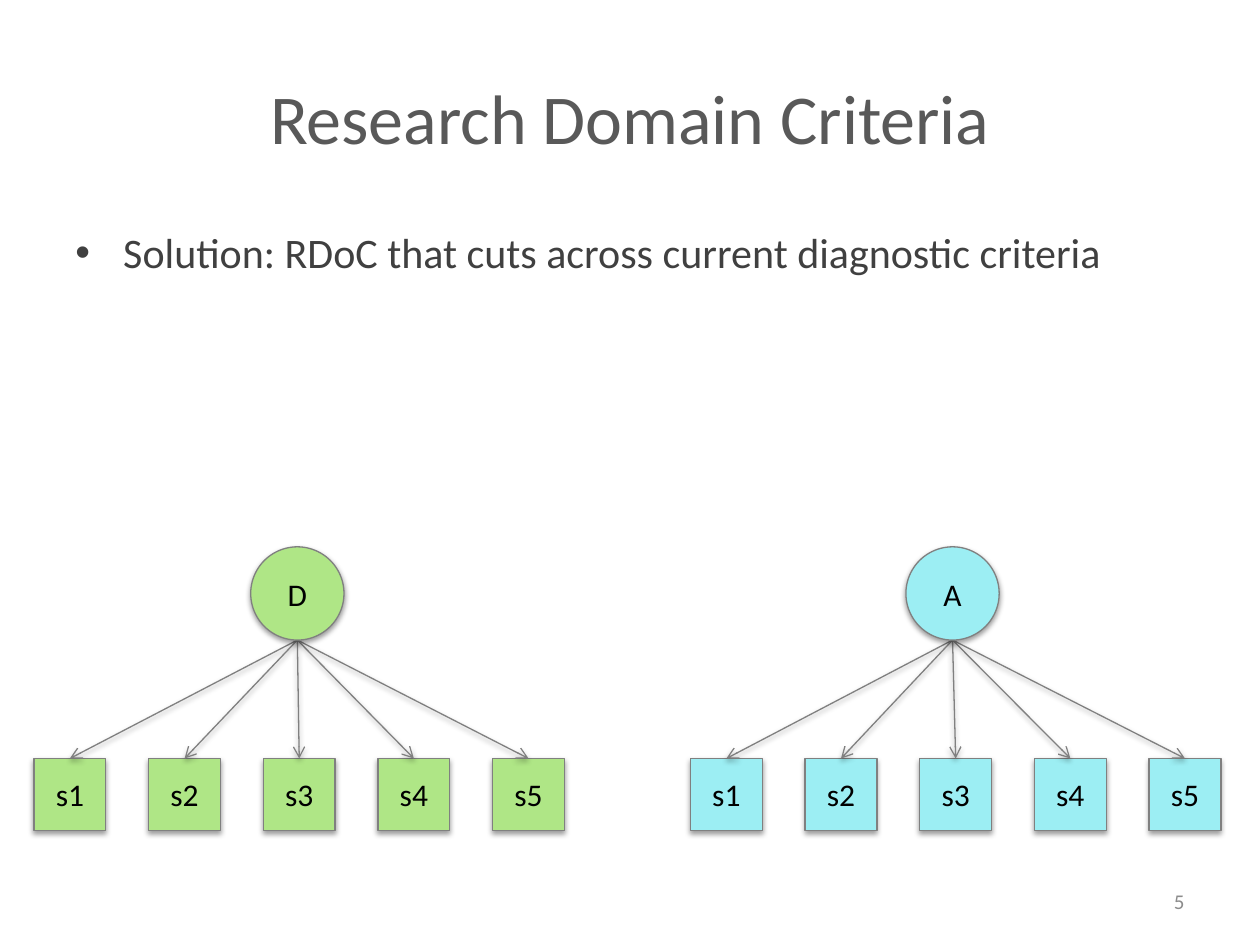
from dataclasses import dataclass

from lxml import etree
from pptx import Presentation
from pptx.dml.color import RGBColor
from pptx.enum import shapes, text
from pptx.oxml import ns
from pptx.util import Inches, Pt

FONT = "Calibri"
BLACK = RGBColor(0x00, 0x00, 0x00)
TITLE_GRAY = RGBColor(0x59, 0x59, 0x59)
BODY_GRAY = RGBColor(0x40, 0x40, 0x40)
NUMBER_GRAY = RGBColor(0x8C, 0x8C, 0x8C)
LINE_GRAY = RGBColor(0x80, 0x80, 0x80)
GREEN = RGBColor(0xAF, 0xE6, 0x86)
CYAN = RGBColor(0x9C, 0xEE, 0xF3)

SYMPTOMS = ("s1", "s2", "s3", "s4", "s5")
SYMPTOM_TOP, SYMPTOM_SIZE, SYMPTOM_STEP = 6.02, 0.57, 0.91
DISORDER_TOP, DISORDER_SIZE = 4.34, 0.74


@dataclass(frozen=True)
class Disorder:
    label: str
    color: RGBColor
    center: float
    first_symptom: float


DISORDERS = (
    Disorder("D", GREEN, center=2.36, first_symptom=0.27),
    Disorder("A", CYAN, center=7.56, first_symptom=5.48),
)


def sub(parent, tag: str, **attrs):
    return etree.SubElement(parent, ns.qn(tag), attrs)


def add_shadow(s) -> None:
    """Give a shape or connector a soft shadow straight below it."""
    effects = sub(s._element.spPr, "a:effectLst")
    shadow = sub(effects, "a:outerShdw", blurRad=str(Pt(3.1)), dist=str(Pt(1.6)),
                 dir="5400000", rotWithShape="0")
    sub(sub(shadow, "a:srgbClr", val=str(BLACK)), "a:alpha", val="38000")


def write(s, content: str, *, size: float, color: RGBColor,
          align=text.PP_ALIGN.CENTER, anchor=text.MSO_ANCHOR.MIDDLE,
          bullet: str = "") -> None:
    tf = s.text_frame
    tf.word_wrap = True
    tf.vertical_anchor = anchor
    p = tf.paragraphs[0]
    p.alignment = align
    if bullet:
        p_pr = p._p.get_or_add_pPr()
        p_pr.set("marL", str(Inches(0.38)))
        p_pr.set("indent", str(-Inches(0.38)))
        sub(p_pr, "a:buFont", typeface="Arial")
        sub(p_pr, "a:buChar", char=bullet)
    r = p.add_run()
    r.text = content
    r.font.name = FONT
    r.font.size = Pt(size)
    r.font.color.rgb = color


def add_text(slide, content: str, left: float, top: float,
             width: float, height: float, **fmt) -> None:
    box = slide.shapes.add_textbox(*map(Inches, (left, top, width, height)))
    write(box, content, **fmt)


def add_node(slide, kind, label: str, left: float, top: float,
             size: float, color: RGBColor) -> None:
    s = slide.shapes.add_shape(kind, *map(Inches, (left, top, size, size)))
    s.fill.solid()
    s.fill.fore_color.rgb = color
    s.line.color.rgb = LINE_GRAY
    s.line.width = Pt(0.75)
    add_shadow(s)
    write(s, label, size=18, color=BLACK)


def add_arrow(slide, x1: float, y1: float, x2: float, y2: float) -> None:
    c = slide.shapes.add_connector(shapes.MSO_CONNECTOR.STRAIGHT,
                                   *map(Inches, (x1, y1, x2, y2)))
    c.line.color.rgb = LINE_GRAY
    c.line.width = Pt(0.75)
    sub(c.line._get_or_add_ln(), "a:tailEnd", type="arrow")
    add_shadow(c)


def add_disorder(slide, d: Disorder) -> None:
    """Draw a disorder circle with arrows to its row of symptoms."""
    for i, symptom in enumerate(SYMPTOMS):
        left = d.first_symptom + i * SYMPTOM_STEP
        add_node(slide, shapes.MSO_SHAPE.RECTANGLE, symptom, left,
                 SYMPTOM_TOP, SYMPTOM_SIZE, d.color)
        add_arrow(slide, d.center, DISORDER_TOP + DISORDER_SIZE,
                  left + SYMPTOM_SIZE / 2, SYMPTOM_TOP)
    add_node(slide, shapes.MSO_SHAPE.OVAL, d.label, d.center - DISORDER_SIZE / 2,
             DISORDER_TOP, DISORDER_SIZE, d.color)


def main() -> None:
    prs = Presentation()
    prs.slide_width, prs.slide_height = Inches(10), Inches(7.5)
    slide = prs.slides.add_slide(prs.slide_layouts[6])
    add_text(slide, "Research Domain Criteria", 0.5, 0.3, 9, 1.25,
             size=40, color=TITLE_GRAY)
    add_text(slide, "Solution: RDoC that cuts across current diagnostic criteria",
             0.5, 1.75, 9, 4.95, size=24, color=BODY_GRAY, bullet="•",
             align=text.PP_ALIGN.LEFT, anchor=text.MSO_ANCHOR.TOP)
    add_text(slide, "5", 7.17, 6.95, 2.33, 0.4, size=12, color=NUMBER_GRAY,
             align=text.PP_ALIGN.RIGHT)
    for disorder in DISORDERS:
        add_disorder(slide, disorder)
    prs.save("out.pptx")


if __name__ == "__main__":
    main()
